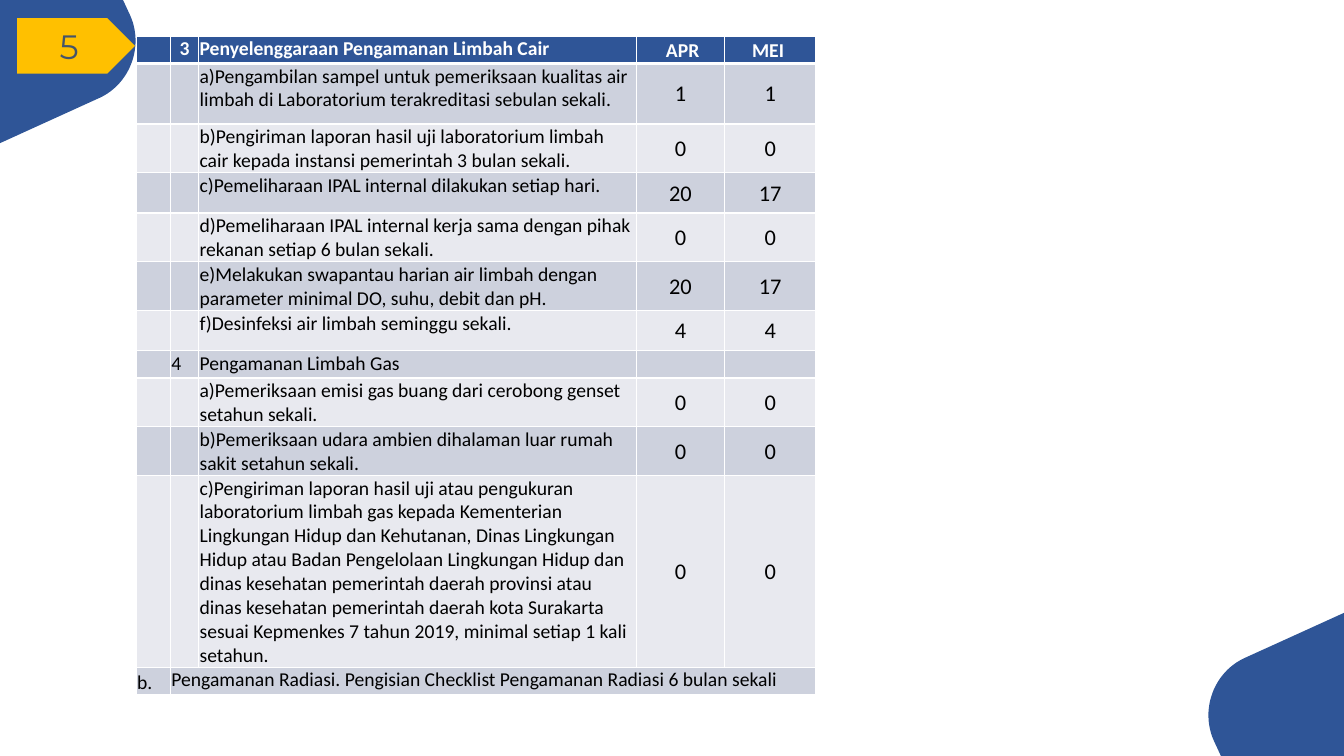
from pptx import Presentation
from pptx.dml.color import RGBColor
from pptx.enum.shapes import MSO_SHAPE
from pptx.enum.text import MSO_ANCHOR, PP_ALIGN
from pptx.oxml.xmlchemy import OxmlElement
from pptx.util import Inches, Pt

PENTAGON = MSO_SHAPE.PENTAGON
TOP, MIDDLE, BOTTOM = MSO_ANCHOR.TOP, MSO_ANCHOR.MIDDLE, MSO_ANCHOR.BOTTOM
LEFT, CENTER = PP_ALIGN.LEFT, PP_ALIGN.CENTER

WIDTH, HEIGHT = 13.33, 7.5
COLORS = {
    "blue": "2F5597", "amber": "FFC000", "slate": "44546A",
    "white": "FFFFFF", "black": "000000", "dark_band": "CDD1DD", "light_band": "E8E9EF",
}
TABLE_LEFT, TABLE_TOP = 1.35, 0.36
COLUMN_WIDTHS = [0.34, 0.28, 4.34, 0.88, 0.9]
ROW_HEIGHTS = [0.27, 0.6, 0.43, 0.4, 0.43, 0.43, 0.4, 0.27, 0.43, 0.43, 1.57, 0.27]
ROWS = [
    ("", "3", "Penyelenggaraan Pengamanan Limbah Cair", " APR", "MEI "),
    ("", "", "a)Pengambilan sampel untuk pemeriksaan kualitas air limbah di "
     "Laboratorium terakreditasi sebulan sekali.", "1", "1"),
    ("", "", "b)Pengiriman laporan hasil uji laboratorium limbah cair kepada "
     "instansi pemerintah 3 bulan sekali.", "0", "0"),
    ("", "", "c)Pemeliharaan IPAL internal dilakukan setiap hari.", "20", "17"),
    ("", "", "d)Pemeliharaan IPAL internal kerja sama dengan pihak rekanan "
     "setiap 6 bulan sekali.", "0", "0"),
    ("", "", "e)Melakukan swapantau harian air limbah dengan parameter minimal "
     "DO, suhu, debit dan pH.", "20", "17"),
    ("", "", "f)Desinfeksi air limbah seminggu sekali.", "4", "4"),
    ("", "4", "Pengamanan Limbah Gas", "", ""),
    ("", "", "a)Pemeriksaan emisi gas buang dari cerobong genset setahun sekali.", "0", "0"),
    ("", "", "b)Pemeriksaan udara ambien dihalaman luar rumah sakit setahun sekali.", "0", "0"),
    ("", "", "c)Pengiriman laporan hasil uji atau pengukuran laboratorium limbah gas "
     "kepada Kementerian Lingkungan Hidup dan Kehutanan, Dinas Lingkungan Hidup atau "
     "Badan Pengelolaan Lingkungan Hidup dan dinas kesehatan pemerintah daerah provinsi "
     "atau dinas kesehatan pemerintah daerah kota Surakarta sesuai Kepmenkes 7 tahun "
     "2019, minimal setiap 1 kali setahun.", "0", "0"),
    ("b.", "Pengamanan Radiasi. Pengisian Checklist Pengamanan Radiasi 6 bulan sekali",
     "", "", ""),
]


def color(name):
    return RGBColor.from_string(COLORS[name])


def paint(shape, fill):
    shape.shadow.inherit = False
    shape.fill.solid()
    shape.fill.fore_color.rgb = color(fill)
    shape.line.fill.background()


def add_text(paragraph, text, size, font, text_color, bold=False):
    run = paragraph.add_run()
    run.text = text
    run.font.size = Pt(size)
    run.font.name = font
    run.font.bold = bold
    run.font.color.rgb = color(text_color)


def curve(start, control_1, control_2, end, steps=24):
    """Return points along a cubic Bezier curve, without its start."""
    points = []
    for step in range(1, steps + 1):
        t = step / steps
        weights = ((1 - t) ** 3, 3 * t * (1 - t) ** 2, 3 * t * t * (1 - t), t ** 3)
        points.append(tuple(
            sum(weight * value for weight, value in zip(weights, values))
            for values in zip(start, control_1, control_2, end)))
    return points


def add_corner(slide, opposite=False):
    """Draw the rounded wedge at the top left, or turned half round at the bottom right."""
    points = [(0, 0), (1.22, 0), (1.29, 0.15)]
    points += curve((1.29, 0.15), (1.43, 0.46), (1.29, 0.83), (0.99, 0.97))
    points.append((0, 1.42))
    if opposite:
        points = [(WIDTH - x, HEIGHT - y) for x, y in points]
    points = [(Inches(x), Inches(y)) for x, y in points]
    builder = slide.shapes.build_freeform(*points[0])
    builder.add_line_segments(points[1:], close=True)
    paint(builder.convert_to_shape(), "blue")


def add_page_marker(slide, number):
    marker = slide.shapes.add_shape(
        PENTAGON, Inches(0.17), Inches(0.18), Inches(1.17), Inches(0.55))
    paint(marker, "amber")
    marker.text_frame.vertical_anchor = MIDDLE
    paragraph = marker.text_frame.paragraphs[0]
    paragraph.alignment = CENTER
    add_text(paragraph, number, 24.1, "Montserrat", "slate")


def set_borders(cell, top=1, bottom=1):
    properties = cell._tc.get_or_add_tcPr()
    for side, width in (("L", 1), ("R", 1), ("T", top), ("B", bottom)):
        line = OxmlElement(f"a:ln{side}")
        line.set("w", str(Pt(width)))
        fill = OxmlElement("a:solidFill")
        line_color = OxmlElement("a:srgbClr")
        line_color.set("val", COLORS["white"])
        fill.append(line_color)
        line.append(fill)
        properties.append(line)


def set_empty_size(paragraph, size):
    """Keep an empty cell from growing its row."""
    end = OxmlElement("a:endParaRPr")
    end.set("sz", str(size * 100))
    paragraph._p.append(end)


def fill_cell(cell, text, row, column):
    header = row == 0
    count = column >= 3
    set_borders(cell, top=3 if row == 1 else 1, bottom=3 if header else 1)
    cell.fill.solid()
    band = "blue" if header else "dark_band" if row % 2 else "light_band"
    cell.fill.fore_color.rgb = color(band)
    cell.margin_left = cell.margin_right = cell.margin_top = Inches(0.01)
    cell.margin_bottom = 0
    cell.vertical_anchor = MIDDLE if count else BOTTOM if column == 0 else TOP
    paragraph = cell.text_frame.paragraphs[0]
    paragraph.alignment = CENTER if count or (header and column == 1) else LEFT
    if text:
        add_text(paragraph, text, 16 if count and not header else 14, "Calibri",
                 "white" if header else "black", bold=header)
    else:
        set_empty_size(paragraph, 14)


def add_checklist(slide):
    table = slide.shapes.add_table(
        len(ROWS), len(COLUMN_WIDTHS), Inches(TABLE_LEFT), Inches(TABLE_TOP),
        Inches(sum(COLUMN_WIDTHS)), Inches(sum(ROW_HEIGHTS))).table
    for column, width in zip(table.columns, COLUMN_WIDTHS):
        column.width = Inches(width)
    for row, height in zip(table.rows, ROW_HEIGHTS):
        row.height = Inches(height)
    for row, texts in enumerate(ROWS):
        for column, text in enumerate(texts):
            fill_cell(table.cell(row, column), text, row, column)
    last = len(ROWS) - 1
    table.cell(last, 1).merge(table.cell(last, len(COLUMN_WIDTHS) - 1))


def main():
    presentation = Presentation()
    presentation.slide_width = Inches(WIDTH)
    presentation.slide_height = Inches(HEIGHT)
    slide = presentation.slides.add_slide(presentation.slide_layouts[6])
    add_corner(slide, opposite=True)
    add_corner(slide)
    add_page_marker(slide, "5")
    add_checklist(slide)
    presentation.save("out.pptx")


if __name__ == "__main__":
    main()
